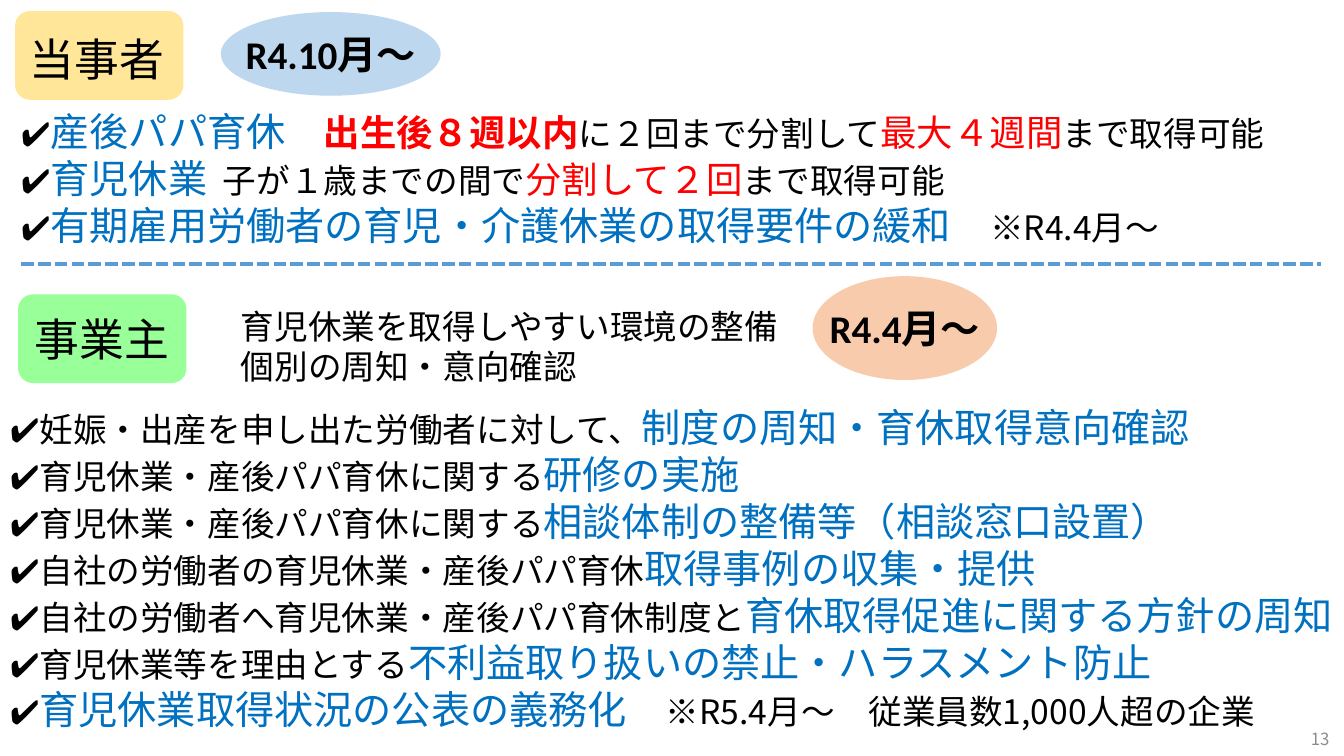
from lxml import etree
from pptx import Presentation
from pptx.dml.color import RGBColor
from pptx.enum.dml import MSO_LINE
from pptx.enum.shapes import MSO_CONNECTOR, MSO_SHAPE
from pptx.enum.text import MSO_ANCHOR, MSO_AUTO_SIZE, PP_ALIGN
from pptx.oxml.ns import qn
from pptx.util import Inches, Pt

ROUNDED = MSO_SHAPE.ROUNDED_RECTANGLE
OVAL = MSO_SHAPE.OVAL
STRAIGHT = MSO_CONNECTOR.STRAIGHT
DASH = MSO_LINE.SQUARE_DOT
LEFT, CENTER = PP_ALIGN.LEFT, PP_ALIGN.CENTER
TOP, MIDDLE = MSO_ANCHOR.TOP, MSO_ANCHOR.MIDDLE
NO_FIT = MSO_AUTO_SIZE.NONE

JAPANESE, LATIN = "Noto Sans CJK JP", "Calibri"
BLACK, BLUE, RED, GRAY = "000000", "0070C0", "FF0000", "8C8C8C"
PLAIN = (24, BLACK, False)
TOPIC = (28, BLUE, False)
LIMIT = (26, RED, False)
DEADLINE = (26, RED, True)

WORKER_POINTS = [
    [("✔", PLAIN), ("産後パパ育休\t", TOPIC), ("出生後８週以内", DEADLINE),
     ("に２回まで分割して", PLAIN), ("最大４週間", LIMIT), ("まで取得可能", PLAIN)],
    [("✔", PLAIN), ("育児休業\t", TOPIC), ("子が１歳までの間で", PLAIN),
     ("分割して２回", LIMIT), ("まで取得可能", PLAIN)],
    [("✔", PLAIN), ("有期雇用労働者の育児・介護休業の取得要件の緩和　", TOPIC),
     ("※R4.4月～", PLAIN)],
]
EMPLOYER_DUTIES = [
    ("妊娠・出産を申し出た労働者に対して、", "制度の周知・育休取得意向確認"),
    ("育児休業・産後パパ育休に関する", "研修の実施"),
    ("育児休業・産後パパ育休に関する", "相談体制の整備等（相談窓口設置）"),
    ("自社の労働者の育児休業・産後パパ育休", "取得事例の収集・提供"),
    ("自社の労働者へ育児休業・産後パパ育休制度と", "育休取得促進に関する方針の周知"),
    ("育児休業等を理由とする", "不利益取り扱いの禁止・ハラスメント防止"),
]
DISCLOSURE = [("✔", PLAIN), ("育児休業取得状況の公表の義務化　", TOPIC),
              ("※R5.4月～　従業員数1,000人超の企業", PLAIN)]


def rgb(color):
    return RGBColor.from_string(color)


def place(item, left, top, width, height):
    item.left, item.top = Inches(left), Inches(top)
    item.width, item.height = Inches(width), Inches(height)


def set_font(font, size, color, bold=False, face=JAPANESE):
    font.size, font.bold, font.name = Pt(size), bold, face
    font.color.rgb = rgb(color)
    east_asian = etree.Element(qn("a:ea"), typeface=JAPANESE)
    font._element.find(qn("a:latin")).addnext(east_asian)


def write(frame, lines, size, color=BLACK, bold=False, face=JAPANESE,
          align=CENTER, anchor=MIDDLE, wrap=True):
    frame.word_wrap, frame.auto_size = wrap, NO_FIT
    frame.vertical_anchor = anchor
    frame.text = "\n".join(lines)
    for paragraph in frame.paragraphs:
        paragraph.alignment = align
        paragraph.line_spacing = Pt(size * 1.2)
        set_font(paragraph.font, size, color, bold, face)


def add_text(slide, box, lines, size, **style):
    text_box = slide.shapes.add_textbox(*map(Inches, box))
    write(text_box.text_frame, lines, size, **style)


def add_badge(slide, kind, box, fill):
    badge = slide.shapes.add_shape(kind, *map(Inches, box))
    badge.shadow.inherit = False
    badge.fill.solid()
    badge.fill.fore_color.rgb = rgb(fill)
    badge.line.fill.background()
    return badge


def add_date(slide, box, fill, date):
    badge = add_badge(slide, OVAL, box, fill)
    write(badge.text_frame, [date], 28, bold=True, face=LATIN, wrap=False)


def fill_list(body, box, points, tab=None):
    place(body, *box)
    frame = body.text_frame
    frame.word_wrap, frame.auto_size = True, NO_FIT
    frame.vertical_anchor = TOP
    for index, point in enumerate(points):
        paragraph = frame.paragraphs[0] if index == 0 else frame.add_paragraph()
        paragraph.space_before = Pt(0)
        paragraph.line_spacing = Pt(33.6)
        properties = paragraph._p.get_or_add_pPr()
        properties.set("marL", "0")
        properties.set("indent", "0")
        etree.SubElement(properties, qn("a:buNone"))
        if tab:
            stops = etree.SubElement(properties, qn("a:tabLst"))
            etree.SubElement(stops, qn("a:tab"), pos=str(Inches(tab)), algn="l")
        for text, style in point:
            run = paragraph.add_run()
            run.text = text
            set_font(run.font, *style)


def add_divider(slide, left, right, y):
    divider = slide.shapes.add_connector(
        STRAIGHT, Inches(left), Inches(y), Inches(right), Inches(y))
    divider.line.color.rgb = rgb("5B9BD5")
    divider.line.width = Pt(3)
    divider.line.dash_style = DASH
    etree.SubElement(divider._element.spPr, qn("a:effectLst"))


def main():
    prs = Presentation()
    prs.slide_width, prs.slide_height = Inches(13.33), Inches(7.5)
    slide = prs.slides.add_slide(prs.slide_layouts[3])
    title, worker_list, employer_list = slide.placeholders

    worker_badge = add_badge(slide, ROUNDED, (0.15, 0.11, 1.67, 0.88), "FFE699")
    title._element.addprevious(worker_badge._element)
    place(title, 0.15, 0.26, 1.62, 0.64)
    write(title.text_frame, ["当事者"], 32)
    add_date(slide, (2.19, 0.12, 2.18, 0.83), "BDD7EE", "R4.10月～")
    fill_list(worker_list, (0.11, 1.01, 13.16, 1.6), WORKER_POINTS, tab=3.11)

    add_divider(slide, 0.21, 13.1, 2.62)

    employer_badge = add_badge(slide, ROUNDED, (0.18, 2.92, 1.67, 0.88), "99FF99")
    write(employer_badge.text_frame, ["事業主"], 32)
    add_text(slide, (2.29, 2.98, 5.7, 0.91),
             ["育児休業を取得しやすい環境の整備", "個別の周知・意向確認"], 24, align=LEFT)
    add_date(slide, (8.06, 2.74, 1.83, 1.03), "F8CBAD", "R4.4月～")
    duties = [[("✔" + scope, PLAIN), (duty, TOPIC)] for scope, duty in EMPLOYER_DUTIES]
    fill_list(employer_list, (0, 3.95, 13.6, 3.5), duties + [DISCLOSURE])

    add_text(slide, (12.88, 7.2, 0.43, 0.25), ["13"], 12, color=GRAY, wrap=False)
    prs.save("out.pptx")


if __name__ == "__main__":
    main()
